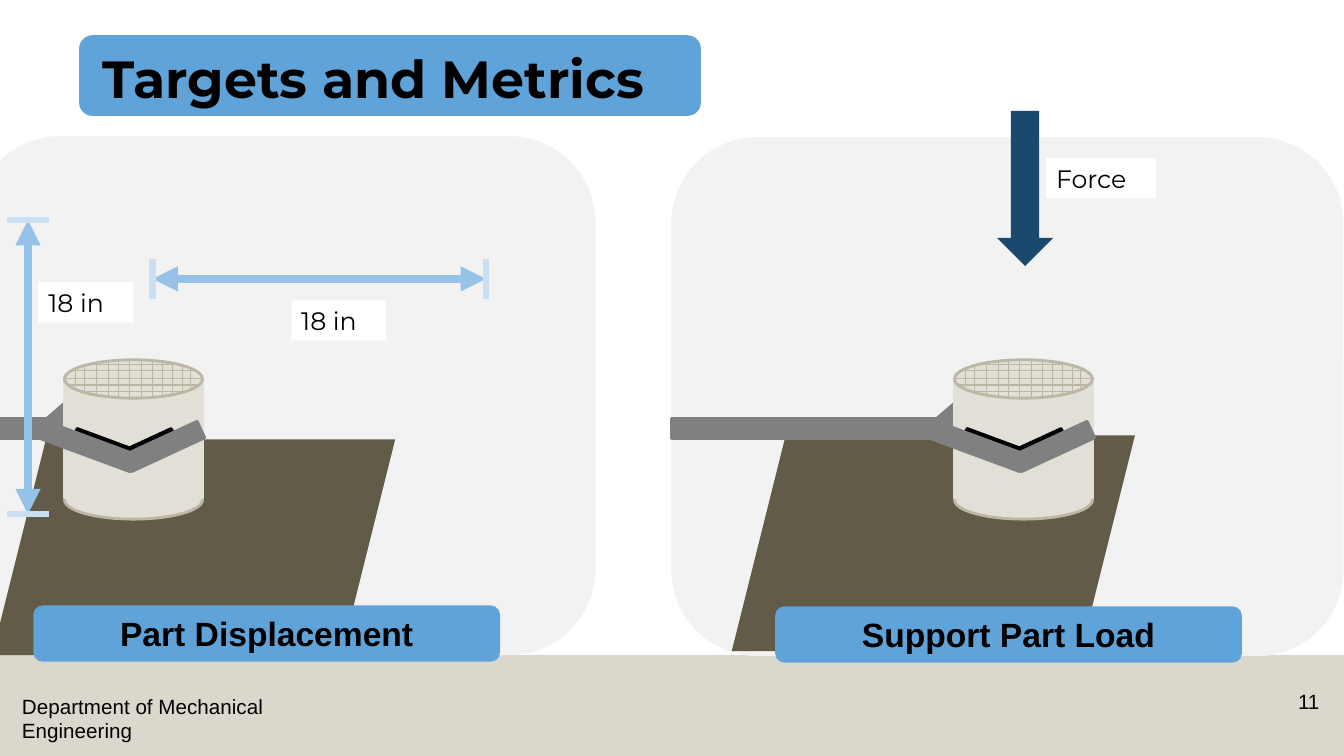
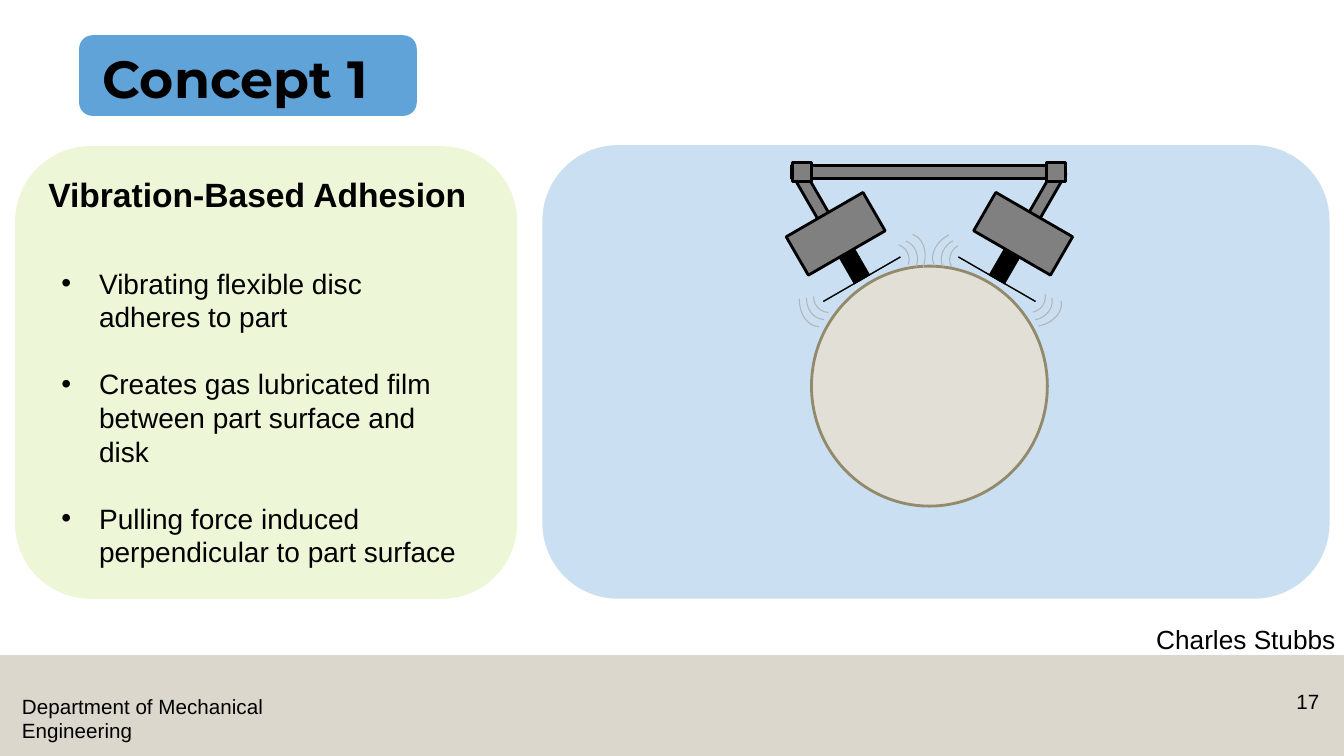
from math import cos, radians, sin, sqrt

from lxml import etree
from pptx import Presentation
from pptx.dml.color import RGBColor
from pptx.enum.shapes import MSO_CONNECTOR, MSO_SHAPE
from pptx.enum.text import MSO_ANCHOR, PP_ALIGN
from pptx.oxml.ns import qn
from pptx.util import Pt

RECT = MSO_SHAPE.RECTANGLE
ROUND = MSO_SHAPE.ROUNDED_RECTANGLE
OVAL = MSO_SHAPE.OVAL
ARC = MSO_SHAPE.ARC
PLATE = MSO_SHAPE.PARALLELOGRAM
DOWN_ARROW = MSO_SHAPE.DOWN_ARROW
STRAIGHT = MSO_CONNECTOR.STRAIGHT
LEFT, CENTER, RIGHT = PP_ALIGN.LEFT, PP_ALIGN.CENTER, PP_ALIGN.RIGHT
TOP, MIDDLE, BOTTOM = MSO_ANCHOR.TOP, MSO_ANCHOR.MIDDLE, MSO_ANCHOR.BOTTOM

SLIDE_WIDTH, SLIDE_HEIGHT = 960, 540
BODY_FONT, TITLE_FONT = "Arial", "Montserrat"
BLACK, WHITE = "000000", "FFFFFF"
BLUE, PALE_BLUE, ARROW_BLUE, NAVY = "60A3D9", "CAE0F2", "95C2E6", "1A496D"
BAND, PANEL_GRAY, PALE_GREEN = "DBD7CD", "F2F2F2", "EDF6D6"
STEEL, EARTH, STONE = "808080", "625B47", "E2DFD7"
STONE_EDGE, BALL_EDGE, WAVE = "BCB6A4", "93896B", "B3B3B3"


def color(code):
    return RGBColor.from_string(code)


def add_shape(page, kind, box, fill=None, line=None, weight=2, turn=0):
    shape = page.shapes.add_shape(kind, *[Pt(value) for value in box])
    shape.shadow.inherit = False
    shape.rotation = turn
    if fill:
        shape.fill.solid()
        shape.fill.fore_color.rgb = color(fill)
    else:
        shape.fill.background()
    if line:
        shape.line.color.rgb = color(line)
        shape.line.width = Pt(weight)
    else:
        shape.line.fill.background()
    return shape


def add_centered(page, kind, x, y, width, height, **style):
    return add_shape(page, kind, (x - width / 2, y - height / 2, width, height), **style)


def add_line(page, start, end, line, weight, arrows=False):
    connector = page.shapes.add_connector(STRAIGHT, *[Pt(value) for value in (*start, *end)])
    connector.line.color.rgb = color(line)
    connector.line.width = Pt(weight)
    if arrows:
        stroke = connector.line._get_or_add_ln()
        for tag in ("a:headEnd", "a:tailEnd"):
            etree.SubElement(stroke, qn(tag), type="triangle")
    etree.SubElement(connector._element.spPr, qn("a:effectLst"))


def prepare(frame, anchor=TOP, inset=(7.2, 3.6)):
    frame.word_wrap = True
    frame.vertical_anchor = anchor
    frame.margin_left = frame.margin_right = Pt(inset[0])
    frame.margin_top = frame.margin_bottom = Pt(inset[1])
    return frame


def add_frame(page, box, **layout):
    area = page.shapes.add_textbox(*[Pt(value) for value in box])
    return prepare(area.text_frame, **layout)


def write(frame, text, size, font=BODY_FONT, bold=False, align=LEFT,
          spacing=None, before=0, bullet=None, indent=27):
    first = not frame.paragraphs[0].runs
    para = frame.paragraphs[0] if first else frame.add_paragraph()
    para.alignment = align
    if spacing:
        para.line_spacing = spacing
    if before and not first:
        para.space_before = Pt(before)
    if bullet:
        properties = para._p.get_or_add_pPr()
        properties.set("marL", str(Pt(indent)))
        properties.set("indent", str(-Pt(indent)))
        etree.SubElement(properties, qn("a:buFont"), typeface=BODY_FONT)
        etree.SubElement(properties, qn("a:buChar"), char=bullet)
    span = para.add_run()
    span.text = text
    span.font.size = Pt(size)
    span.font.name = font
    span.font.bold = bold
    span.font.color.rgb = color(BLACK)


def add_page(deck, title, title_width, number):
    page = deck.slides.add_slide(deck.slide_layouts[6])
    add_shape(page, RECT, (0, 468, SLIDE_WIDTH, 72), BAND)
    write(add_frame(page, (8.6, 491.8, 258.5, 42.5)), "Department of Mechanical Engineering", 14.7)
    write(add_frame(page, (894.2, 488.9, 55.4, 28.8)), number, 14.7, align=RIGHT)
    add_shape(page, ROUND, (56.5, 25.2, title_width, 57.6), BLUE)
    write(add_frame(page, (66.2, 3.6, 828, 78.5), anchor=BOTTOM), title, 37.3,
          font=TITLE_FONT, bold=True, spacing=0.9)
    return page


def add_label(page, left, top, width, text):
    label = add_shape(page, RECT, (left, top, width, 28.8), WHITE)
    write(prepare(label.text_frame), text, 18, font=TITLE_FONT)


def add_mesh(page, left, top, width, height):
    a, b = width / 2, height / 2
    for y in (3.6, 7.9, 13.7, 18, 22.7):
        half = a * sqrt(1 - (y / b - 1) ** 2)
        add_line(page, (left + a - half, top + y), (left + a + half, top + y), STONE_EDGE, 0.75)
    for x in (7.9, 14.4, 23, 31.7, 38.9, 46.1, 54.7, 62.6, 69.8, 77, 84.2, 90):
        half = b * sqrt(1 - (x / a - 1) ** 2)
        add_line(page, (left + x, top + b - half), (left + x, top + b + half), STONE_EDGE, 0.75)


def add_gripper(page, left, top, arm_left):
    def bar(x, y, width, height, turn, fill=STEEL):
        add_shape(page, RECT, (left + x, top + y, width, height), fill, fill, turn=turn)

    width, rim = 98.6, 27.4
    bar(-21.6, 26.6, 58.3, 13.7, 319.1)
    add_shape(page, OVAL, (left, top + 86.4, width, rim), STONE, STONE_EDGE)
    add_shape(page, RECT, (left, top + rim / 2, width, 85), STONE, STONE)
    add_shape(page, OVAL, (left, top, width, rim), STONE, STONE_EDGE)
    add_mesh(page, left, top, width, rim)
    arm_end = -12.2
    bar(arm_left - left, 41.8, left + arm_end - arm_left, 14.4, 0)
    bar(6.5, 56.2, 42.5, 6.5, 20.3, BLACK)
    bar(43.9, 56.2, 35.3, 6.5, 335.2, BLACK)
    bar(-18, 55.4, 69.1, 13, 20.3)
    bar(42.5, 55.4, 57.6, 13, 335.2)


def add_scene(page, box, plate, gripper, caption_left, caption):
    left, top = box[:2]
    add_shape(page, ROUND, box, PANEL_GRAY)
    add_shape(page, PLATE, (left + plate[0], top + plate[1], 288, 154.1), EARTH)
    add_gripper(page, left + gripper[0], top + gripper[1], left)
    pill = add_shape(page, ROUND, (left + caption_left, top + 335.2, 333.4, 40.3), BLUE)
    write(prepare(pill.text_frame, anchor=MIDDLE), caption, 24, bold=True, align=CENTER)


def add_dimension(page, start, end, half):
    dx, dy = (half, 0) if start[0] == end[0] else (0, half)
    add_line(page, start, end, ARROW_BLUE, 6, arrows=True)
    for x, y in (start, end):
        add_line(page, (x - dx, y - dy), (x + dx, y + dy), PALE_BLUE, 4.5)


def add_displacement(page, box):
    left, top = box[:2]
    add_scene(page, box, (13, 216.7), (64.8, 159.8), 42.5, "Part Displacement")
    add_dimension(page, (left + 38.7, top + 60), (left + 38.7, top + 270), 15.1)
    add_dimension(page, (left + 127.7, top + 102), (left + 365.8, top + 102), 14.2)
    for x, y in ((46.1, 104.4), (226.8, 117.4)):
        add_label(page, left + x, top + y, 67.7, "18 in")


def add_load(page, box):
    left, top = box[:2]
    add_scene(page, box, (43.2, 213.1), (202.3, 159.1), 74.2, "Support Part Load")
    add_shape(page, DOWN_ARROW, (left + 232.6, top - 18.7, 40.3, 110.9), NAVY)
    add_label(page, left + 267.8, top + 15.1, 78.5, "Force")


def add_points(page, box):
    left, top = box[:2]
    add_shape(page, ROUND, box, PALE_GREEN)
    write(add_frame(page, (left + 16.6, top + 16.6, 330.5, 36)),
          "Vibration-Based Adhesion", 24, bold=True)
    points = add_frame(page, (left + 25.9, top + 82.1, 297.4, 225.4))
    for text in ("Vibrating flexible disc adheres to part",
                 "Creates gas lubricated film between part surface and disk",
                 "Pulling force induced perpendicular to part surface"):
        write(points, text, 20, spacing=Pt(24), before=24, bullet="•")


def add_vibrator(page, pivot, tilt):
    def part(kind, x, y, width, height, turn=0, **style):
        angle = radians(tilt)
        add_centered(page, kind, pivot[0] + x * cos(angle) - y * sin(angle),
                     pivot[1] + x * sin(angle) + y * cos(angle), width, height,
                     turn=(turn + tilt) % 360, **style)

    part(RECT, 0, -133.9, 63.4, 31.7, fill=STEEL, line=BLACK)
    part(RECT, 0, -96.5, 63.4, 0.7, fill=BLACK, line=BLACK, weight=0.25)
    part(RECT, 0, -107.3, 13, 22.3, fill=BLACK, line=BLACK, weight=0.25)
    sizes = ((22.3, 22.3), (25.9, 29.5), (29.5, 38.9))
    sides = ((212.1, ((-26.6, -97.3), (-30.1, -97.6), (-33.1, -98.9))),
             (48.9, ((26.6, -97.3), (29.7, -94.7), (32.7, -93.4))))
    for turn, centers in sides:
        for center, size in zip(centers, sizes):
            part(ARC, *center, *size, turn=turn, line=WAVE, weight=0.75)


def add_mechanism(page, box):
    left, top = box[:2]
    axis = left + 276
    add_shape(page, ROUND, box, PALE_BLUE)
    for side in (-1, 1):
        add_centered(page, RECT, axis + side * 82.6, top + 38, 46.4, 9,
                     fill=STEEL, line=BLACK, turn=90 + side * 30)
    add_centered(page, OVAL, axis + 0.5, top + 172.1, 168.5, 171.4, fill=STONE, line=BALL_EDGE)
    add_centered(page, RECT, axis, top + 19.1, 195.8, 9.4, fill=STEEL, line=BLACK)
    for side in (-1, 1):
        add_vibrator(page, (axis + 0.5, top + 179.3), side * 30)
        add_centered(page, RECT, axis + side * 90.7, top + 19.4, 13.7, 13.7,
                     fill=STEEL, line=BLACK)


def main():
    deck = Presentation()
    deck.slide_width, deck.slide_height = Pt(SLIDE_WIDTH), Pt(SLIDE_HEIGHT)

    targets = add_page(deck, "Targets and Metrics", 444.2, "11")
    add_displacement(targets, (-18.7, 97.2, 444.2, 370.8))
    add_load(targets, (479.5, 97.9, 480.2, 370.8))

    concept = add_page(deck, "Concept 1", 241.2, "17")
    add_mechanism(concept, (387.4, 103.7, 562.3, 324))
    write(add_frame(concept, (816.5, 435.6, 155.5, 41.8), inset=(9.4, 9.4)), "Charles Stubbs", 18.7)
    add_points(concept, (10.8, 104.4, 358.6, 323.3))

    deck.save("out.pptx")


if __name__ == "__main__":
    main()
